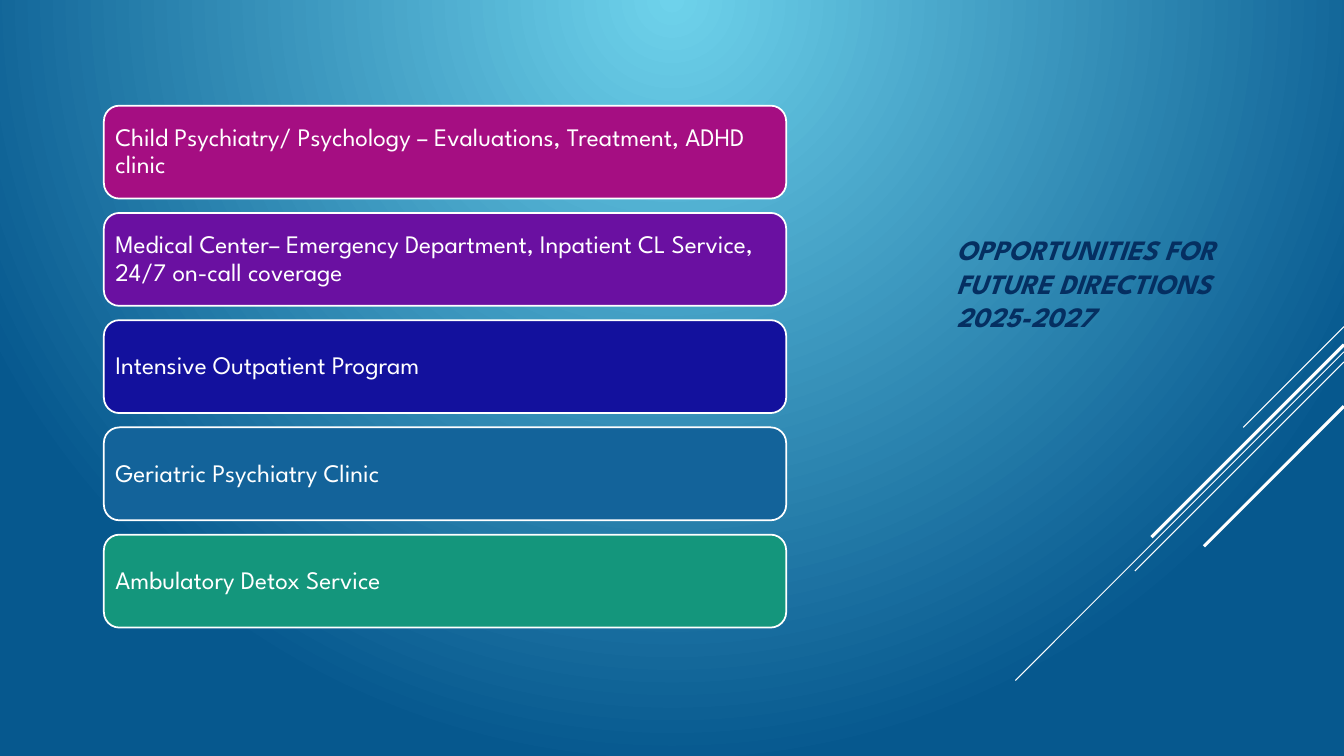
from pptx import Presentation
from pptx.dml.color import RGBColor as RGB
from pptx.enum.shapes import MSO_CONNECTOR as Link, MSO_SHAPE as Form
from pptx.enum.text import MSO_ANCHOR as Anchor, PP_ALIGN as Align
from pptx.oxml import parse_xml as to_xml
from pptx.oxml.ns import nsdecls, qn
from pptx.util import Pt

WIDE, HIGH = 960, 540
FONT = "League Spartan"
HEX = {
    "glow": "6ED2EB", "deep": "06588E", "navy": "052F61", "white": "FFFFFF",
    "plum": "A50E82", "violet": "6A10A1", "indigo": "13119D",
    "blue": "13639A", "green": "14967C",
}
ITEMS = [
    ("Child Psychiatry/ Psychology – Evaluations, Treatment, ADHD clinic", "plum"),
    ("Medical Center– Emergency Department, Inpatient CL Service, "
     "24/7 on-call coverage", "violet"),
    ("Intensive Outpatient Program", "indigo"),
    ("Geriatric Psychiatry Clinic", "blue"),
    ("Ambulatory Detox Service", "green"),
]
# Height at the right edge, run to the left, weight
RAYS = [
    (233.3, 72, 0.75), (251.3, 234.7, 0.75), (258.5, 149.4, 0.75),
    (246.2, 137.5, 2.25), (290.2, 100, 2.25),
]
TITLE = "OPPORTUNITIES FOR\vFUTURE DIRECTIONS\v2025-2027"


def color(name):
    return RGB.from_string(HEX[name])


def apply(obj, style):
    for key, value in style.items():
        setattr(obj, key, value)


def add_back(slide):
    """Radial glow centred on the top edge."""
    fill = slide.background.fill
    fill.gradient()
    for stop, name, pos in zip(fill.gradient_stops, ("glow", "deep"), (0, 1)):
        stop.color.rgb = color(name)
        stop.position = pos
    grad = slide.element.find(".//" + qn("a:gradFill"))
    grad.replace(grad.find(qn("a:lin")), to_xml(
        f'<a:path {nsdecls("a")} path="circle">'
        '<a:fillToRect l="0" t="0" r="0" b="100000"/></a:path>'))


def add_ray(slide, top, run, weight):
    """Diagonal line falling left from the right edge."""
    ray = slide.shapes.add_connector(
        Link.STRAIGHT, Pt(WIDE), Pt(top), Pt(WIDE - run), Pt(top + run))
    ray.line.color.rgb = color("white")
    ray.line.width = Pt(weight)
    ray.element.spPr.append(to_xml(f'<a:effectLst {nsdecls("a")}/>'))


def set_text(shape, text, tint, frame, para, font):
    box = shape.text_frame
    apply(box, {"word_wrap": True, "vertical_anchor": Anchor.MIDDLE, **frame})
    box.text = text
    line = box.paragraphs[0]
    apply(line, {"alignment": Align.LEFT, **para})
    for run in line.runs:
        apply(run.font, {"name": FONT, **font})
        run.font.color.rgb = color(tint)


def add_card(slide, top, text, tint):
    card = slide.shapes.add_shape(
        Form.ROUNDED_RECTANGLE, Pt(74.2), Pt(top), Pt(487.4), Pt(66.4))
    card.shadow.inherit = False
    card.fill.solid()
    card.fill.fore_color.rgb = color(tint)
    card.line.color.rgb = color("white")
    card.line.width = Pt(1.25)
    sides = ("left", "top", "right", "bottom")
    set_text(card, text, "white",
             {f"margin_{side}": Pt(5) for side in sides},
             {"line_spacing": 0.9}, {"size": Pt(18)})


def add_title(slide):
    box = slide.shapes.add_textbox(Pt(676), Pt(74.2), Pt(240), Pt(255.6))
    set_text(box, TITLE, "navy", {}, {},
             {"size": Pt(20), "bold": True, "italic": True})


def main():
    deck = Presentation()
    apply(deck, {"slide_width": Pt(WIDE), "slide_height": Pt(HIGH)})
    slide = deck.slides.add_slide(deck.slide_layouts[6])

    # Backdrop
    add_back(slide)
    for ray in RAYS:
        add_ray(slide, *ray)

    # Title and stacked cards
    add_title(slide)
    for row, (text, tint) in enumerate(ITEMS):
        add_card(slide, 75.5 + 76.6 * row, text, tint)

    deck.save("out.pptx")


if __name__ == "__main__":
    main()
